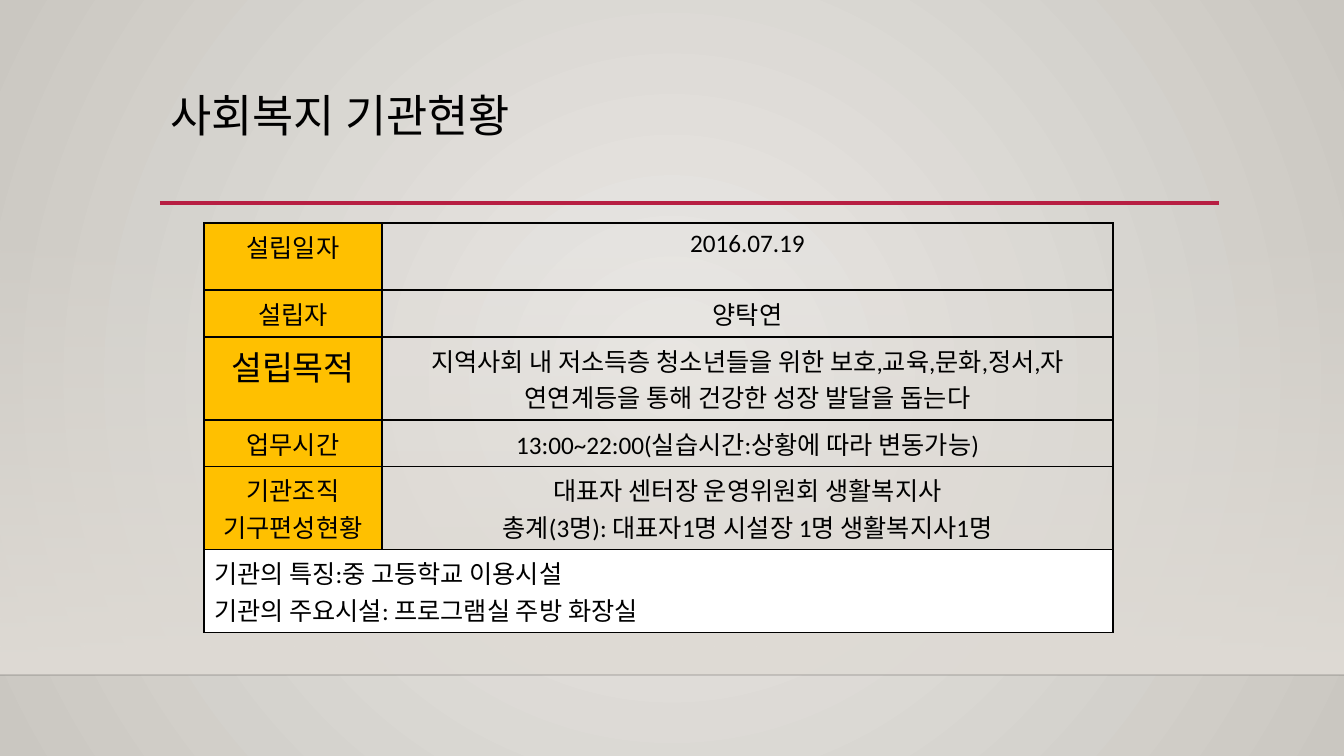
from dataclasses import dataclass

from pptx import Presentation
from pptx.dml.color import RGBColor
from pptx.enum.shapes import MSO_CONNECTOR, MSO_SHAPE
from pptx.enum.text import MSO_ANCHOR, PP_ALIGN
from pptx.oxml import parse_xml
from pptx.oxml.ns import nsdecls, qn
from pptx.util import Emu, Pt

LEFT, CENTER = PP_ALIGN.LEFT, PP_ALIGN.CENTER
TOP = MSO_ANCHOR.TOP
RECTANGLE = MSO_SHAPE.RECTANGLE
STRAIGHT = MSO_CONNECTOR.STRAIGHT

TITLE = "사회복지 기관현황"
# label lines, label size key, value lines, row height in px
FACTS = [
    (["설립일자"], "body", ["2016.07.19"], 67),
    (["설립자"], "body", ["양탁연"], 47),
    (["설립목적"], "large",
     ["지역사회 내 저소득층 청소년들을 위한 보호,교육,문화,정서,자 연연계등을 통해 "
      "건강한 성장 발달을 돕는다"], 83),
    (["업무시간"], "body", ["13:00~22:00(실습시간:상황에 따라 변동가능)"], 46),
    (["기관조직", "기구편성현황"], "body",
     ["대표자 센터장 운영위원회 생활복지사",
      "총계(3명): 대표자1명 시설장 1명 생활복지사1명"], 83),
]
FEATURES = ["기관의 특징:중 고등학교 이용시설", "기관의 주요시설: 프로그램실 주방 화장실"]
FEATURES_HEIGHT = 83
COLUMNS = [178, 731]

SLIDE_WIDTH, SLIDE_HEIGHT = 1344, 756
TABLE_LEFT, TABLE_TOP = 204, 223
FLOOR = 675


@dataclass(frozen=True)
class Theme:
    font: str = "Calibri"
    ink: str = "000000"
    accent: str = "B71E42"
    label: str = "FFC000"
    features: str = "FFFFFF"
    center: str = "ECEAE7"
    edge: str = "CAC7C1"
    wall: str = "DFDBD5"
    floor: str = "000001"
    title: int = 32
    large: int = 24
    body: int = 18


THEME = Theme()


def px(length):
    return Emu(round(length * 914400 / 100.8))


def write(frame, lines, size=THEME.body, align=LEFT, spacing=None):
    for index, line in enumerate(lines):
        paragraph = frame.paragraphs[0] if index == 0 else frame.add_paragraph()
        paragraph.alignment = align
        paragraph.line_spacing = spacing
        run = paragraph.add_run()
        run.text = line
        run.font.name = THEME.font
        run.font.size = Pt(size)
        run.font.color.rgb = RGBColor.from_string(THEME.ink)


def set_gradient(fill, properties, stops, direction):
    """Fill with (position, colour, opacity) stops in percent."""
    fill.gradient()
    stop_xml = "".join(
        f'<a:gs pos="{position * 1000}"><a:srgbClr val="{color}">'
        f'<a:alpha val="{opacity * 1000}"/></a:srgbClr></a:gs>'
        for position, color, opacity in stops)
    properties.replace(properties.find(qn("a:gradFill")), parse_xml(
        f'<a:gradFill {nsdecls("a")} rotWithShape="1">'
        f'<a:gsLst>{stop_xml}</a:gsLst>{direction}</a:gradFill>'))


def add_rule(slide, left, right, y, color, width, opacity=100):
    rule = slide.shapes.add_connector(STRAIGHT, px(left), px(y), px(right), px(y))
    rule.line.width = Pt(width)
    rule.line.color.rgb = RGBColor.from_string(color)
    properties = rule._element.spPr
    properties.find(".//" + qn("a:srgbClr")).append(
        parse_xml(f'<a:alpha {nsdecls("a")} val="{opacity * 1000}"/>'))
    properties.append(parse_xml(f'<a:effectLst {nsdecls("a")}/>'))


def format_cell(cell, color=None):
    properties = cell._tc.get_or_add_tcPr()
    for side in ("lnL", "lnR", "lnT", "lnB"):
        properties.append(parse_xml(
            f'<a:{side} {nsdecls("a")} w="12700"><a:solidFill>'
            f'<a:srgbClr val="{THEME.ink}"/></a:solidFill></a:{side}>'))
    if color:
        cell.fill.solid()
        cell.fill.fore_color.rgb = RGBColor.from_string(color)
    else:
        cell.fill.background()


def add_backdrop(slide):
    fill = slide.background.fill
    fill.solid()
    set_gradient(
        fill, slide._element.find(".//" + qn("p:bgPr")),
        [(0, THEME.center, 100), (100, THEME.edge, 100)],
        '<a:path path="circle"><a:fillToRect l="50000" t="50000" r="50000" b="50000"/></a:path>')
    wall = slide.shapes.add_shape(
        RECTANGLE, 0, px(TABLE_TOP), px(SLIDE_WIDTH), px(FLOOR - TABLE_TOP))
    wall.shadow.inherit = False
    wall.line.fill.background()
    set_gradient(wall.fill, wall._element.spPr,
                 [(0, THEME.wall, 0), (100, THEME.wall, 100)],
                 '<a:lin ang="5400000" scaled="0"/>')
    add_rule(slide, 0, SLIDE_WIDTH, FLOOR, THEME.floor, 1, opacity=20)
    add_rule(slide, 160, 1219, 203, THEME.accent, 2.5)


def add_title(slide):
    title = slide.shapes.title
    title.left, title.top, title.width, title.height = map(px, (160, 89, 1059, 115))
    title.text_frame.vertical_anchor = TOP
    write(title.text_frame, [TITLE], size=THEME.title, spacing=0.9)


def add_facts(slide):
    heights = [fact[-1] for fact in FACTS] + [FEATURES_HEIGHT]
    table = slide.shapes.add_table(
        len(heights), len(COLUMNS), px(TABLE_LEFT), px(TABLE_TOP),
        px(sum(COLUMNS)), px(sum(heights))).table
    table.first_row = table.horz_banding = False
    for column, width in zip(table.columns, COLUMNS):
        column.width = px(width)
    for row, height in zip(table.rows, heights):
        row.height = px(height)
    for index, (label, size, value, _) in enumerate(FACTS):
        label_cell, value_cell = table.cell(index, 0), table.cell(index, 1)
        format_cell(label_cell, THEME.label)
        format_cell(value_cell)
        write(label_cell.text_frame, label, size=getattr(THEME, size), align=CENTER)
        write(value_cell.text_frame, value, align=CENTER)
    last = len(FACTS)
    features = table.cell(last, 0)
    features.merge(table.cell(last, 1))
    for cell in table.rows[last].cells:
        format_cell(cell, THEME.features)
    write(features.text_frame, FEATURES)


def main():
    deck = Presentation()
    deck.slide_width, deck.slide_height = px(SLIDE_WIDTH), px(SLIDE_HEIGHT)
    slide = deck.slides.add_slide(deck.slide_layouts[5])
    add_backdrop(slide)
    add_title(slide)
    add_facts(slide)
    deck.save("out.pptx")


if __name__ == "__main__":
    main()
